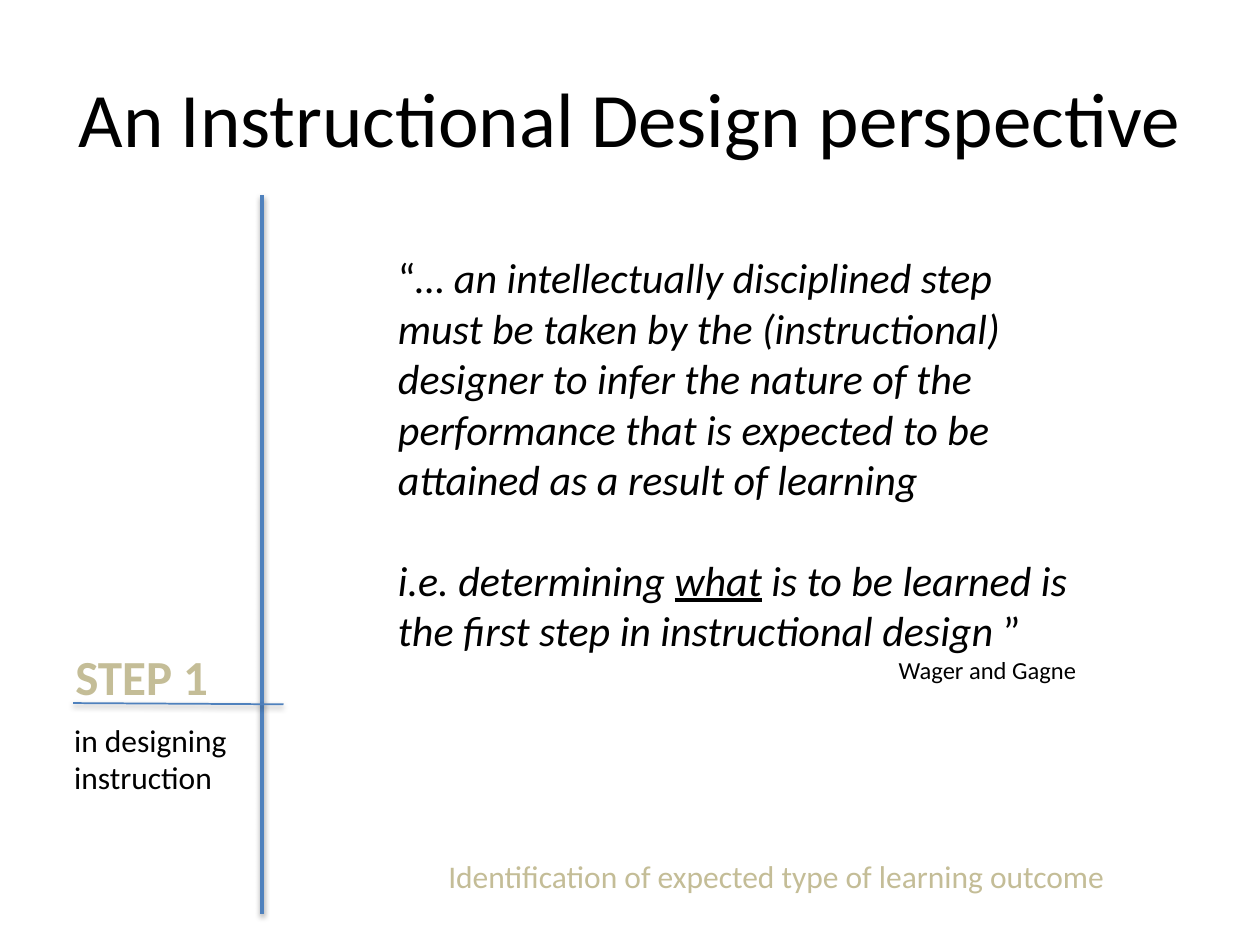
from dataclasses import dataclass

from pptx import Presentation
from pptx.dml.color import RGBColor as Color
from pptx.enum.shapes import MSO_CONNECTOR as Connector
from pptx.enum.text import MSO_ANCHOR as Anchor, MSO_AUTO_SIZE as AutoSize, PP_ALIGN as Align
from pptx.util import Inches, Pt


@dataclass(frozen=True)
class Theme:
    font: str = "Calibri"
    ink: str = "000000"
    accent: str = "C4BD97"
    rule: str = "4F81BD"
    title: int = 44
    step: int = 28
    quote: int = 24
    label: int = 18
    source: int = 14


THEME = Theme()
TITLE = "An Instructional Design perspective"
QUOTE = [
    [("“", ""), ("… an intellectually disciplined step", "i")],
    [("must be taken by the (instructional) designer to infer the nature of the "
      "performance that is expected to be attained as a result of learning", "i")],
    [("i.e. determining ", "i"), ("what", "iu"),
     (" is to be learned is the first step in instructional design ", "i"), ("”", "")],
]
SOURCE = [("Wager and Gagne", "i")]
LABELS = [
    ((0.5, 5.08, 1.27, 0.57), [[("STEP 1", "b")]], THEME.step, THEME.accent),
    ((0.49, 5.67, 1.43, 0.71), [[("in designing", "")], [("instruction", "")]],
     THEME.label, THEME.ink),
    ((3.46, 6.75, 5.47, 0.4), [[("Identification of expected type of learning outcome", "")]],
     THEME.label, THEME.accent),
]
QUOTE_BOX = (3.06, 1.95, 5.58, 3.57)
TITLE_BOX = (0.5, 0.3, 9, 1.25)
RULES = [((2.08, 1.55, 2.08, 7.25), 2), ((0.58, 5.58, 2.25, 5.59), 1)]


def style_run(run, size, color, marks=""):
    font = run.font
    font.name, font.size = THEME.font, Pt(size)
    font.color.rgb = Color.from_string(color)
    for mark, name in (("b", "bold"), ("i", "italic"), ("u", "underline")):
        if mark in marks:
            setattr(font, name, True)


def fill_paragraph(paragraph, runs, size, color):
    for text, marks in runs:
        run = paragraph.add_run()
        run.text = text
        style_run(run, size, color, marks)


def add_text(slide, box, paragraphs, size, color, wrap=False):
    frame = slide.shapes.add_textbox(*map(Inches, box)).text_frame
    frame.word_wrap = wrap
    frame.auto_size = AutoSize.SHAPE_TO_FIT_TEXT
    for index, runs in enumerate(paragraphs):
        paragraph = frame.add_paragraph() if index else frame.paragraphs[0]
        fill_paragraph(paragraph, runs, size, color)
    return frame


def main():
    """Build the instructional design quote slide."""
    presentation = Presentation()
    presentation.slide_width, presentation.slide_height = Inches(10), Inches(7.5)
    slide = presentation.slides.add_slide(presentation.slide_layouts[5])

    title = slide.shapes.title
    title.left, title.top, title.width, title.height = map(Inches, TITLE_BOX)
    title.text_frame.text = TITLE
    title.text_frame.vertical_anchor = Anchor.MIDDLE
    title.text_frame.paragraphs[0].alignment = Align.CENTER
    style_run(title.text_frame.paragraphs[0].runs[0], THEME.title, THEME.ink)

    for ends, width in RULES:
        rule = slide.shapes.add_connector(Connector.STRAIGHT, *map(Inches, ends))
        rule.line.color.rgb = Color.from_string(THEME.rule)
        rule.line.width = Pt(width)

    for label in LABELS:
        add_text(slide, *label)

    quote = add_text(slide, QUOTE_BOX, QUOTE, THEME.quote, THEME.ink, wrap=True)
    quote.paragraphs[-1].space_before = Pt(1.2 * THEME.quote)
    source = quote.add_paragraph()
    source.alignment = Align.RIGHT
    fill_paragraph(source, [(text, "") for text, _ in SOURCE], THEME.source, THEME.ink)

    presentation.save("out.pptx")


if __name__ == "__main__":
    main()
